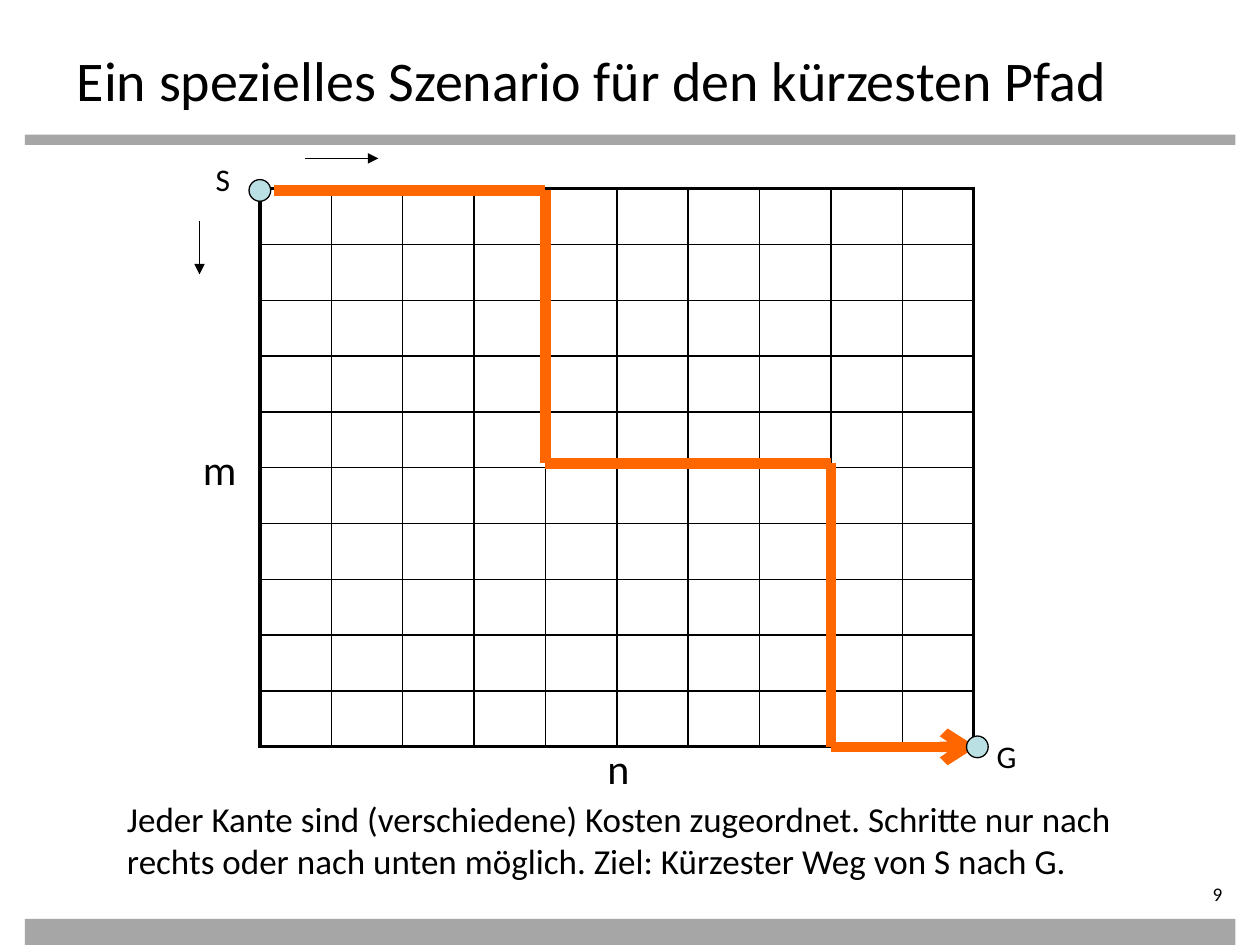
from pptx import Presentation
from pptx import util as u
from pptx.dml.color import RGBColor
from pptx.enum import shapes, text
from pptx.oxml.ns import qn
from lxml import etree

Pt = u.Pt
FONT = "Calibri"
COLORS = {"ink": "000000", "bar": "A6A6A6", "path": "FF6600", "node": "BBE0E3"}
N = 10


def rgb(name):
    """Return the named colour."""
    return RGBColor.from_string(COLORS[name])


def style(p, size, align=text.PP_ALIGN.LEFT):
    """Format a paragraph in the slide's typeface."""
    p.alignment = align
    p.font.name = FONT
    p.font.size = Pt(size)
    p.font.color.rgb = rgb("ink")


def add_text(s, box, words, size, wrap=False):
    """Add a text box and return its frame."""
    tf = s.shapes.add_textbox(*map(Pt, box)).text_frame
    tf.word_wrap = wrap
    tf.text = words
    style(tf.paragraphs[0], size)
    return tf


def add_shape(s, kind, box, fill, outline=False):
    """Add a flat filled shape with an optional thin outline."""
    sp = s.shapes.add_shape(kind, *map(Pt, box))
    sp.shadow.inherit = False
    sp.fill.solid()
    sp.fill.fore_color.rgb = rgb(fill)
    if outline:
        sp.line.color.rgb = rgb("ink")
        sp.line.width = Pt(0.75)
    else:
        sp.line.fill.background()


def add_line(s, start, end, color, width, head=None):
    """Add a straight line with an optional arrowhead at its end."""
    ln = s.shapes.add_connector(shapes.MSO_CONNECTOR.STRAIGHT,
                                *map(Pt, (*start, *end)))
    ln.line.color.rgb = rgb(color)
    ln.line.width = Pt(width)
    if head:
        etree.SubElement(ln.line._get_or_add_ln(), qn("a:tailEnd"), type=head)
    etree.SubElement(ln._element.spPr, qn("a:effectLst"))


def add_node(s, x, y, d=12.4):
    """Add a round node centred on a point."""
    add_shape(s, shapes.MSO_SHAPE.OVAL, (x - d / 2, y - d / 2, d, d), "node", True)


def set_borders(cell, widths):
    """Draw the left, right, top and bottom borders of a cell."""
    tcPr = cell._tc.get_or_add_tcPr()
    for i, (side, width) in enumerate(zip("LRTB", widths)):
        ln = etree.Element(qn("a:ln" + side), w=str(Pt(width)))
        fill = etree.SubElement(ln, qn("a:solidFill"))
        etree.SubElement(fill, qn("a:srgbClr"), val=COLORS["ink"])
        tcPr.insert(i, ln)


def add_grid(s, x, y, w, h):
    """Add the empty grid with a heavier outer frame."""
    table = s.shapes.add_table(N, N, *map(Pt, (x, y, w, h))).table
    table.first_row = table.horz_banding = False
    for i in range(N):
        table.columns[i].width = Pt(w / N)
        table.rows[i].height = Pt(h / N)
    for r in range(N):
        for c in range(N):
            cell = table.cell(r, c)
            cell.fill.background()
            edges = (c == 0, c == N - 1, r == 0, r == N - 1)
            set_borders(cell, [2.25 if edge else 1 for edge in edges])


def add_diagram(s, x, y, w, h):
    """Add the grid, its labels, the route and the step directions."""
    add_grid(s, x, y, w, h)
    add_node(s, x, y + 1)
    labels = [("S", -32.4, -20, 23.8, 28.8, 18), ("G", 414, 309.6, 26.6, 28.8, 18),
              ("m", -39.6, 142, 34.6, 36, 24), ("n", 191.5, 313.2, 28, 36, 24)]
    for words, dx, dy, lw, lh, size in labels:
        add_text(s, (x + dx, y + dy, lw, lh), words, size)

    turn1, turn2 = x + 0.4 * w, x + 0.8 * w
    top, middle, bottom = y + 1, y + 157, y + h
    route = [(x + 8, top), (turn1, top), (turn1, middle),
             (turn2, middle), (turn2, bottom), (x + w + 1.5, bottom)]
    for i, (start, end) in enumerate(zip(route, route[1:])):
        add_line(s, start, end, "path", 6, "arrow" if i == len(route) - 2 else None)
    add_node(s, x + w + 2, bottom)

    add_line(s, (x + 26, y - 17.3), (x + 67.7, y - 17.3), "ink", 0.75, "triangle")
    add_line(s, (x - 34.5, y + 18.7), (x - 34.5, y + 49), "ink", 0.75, "triangle")


def add_title(s, x, y, w, h):
    """Place and format the title."""
    sp = s.shapes.title
    sp.left, sp.top, sp.width, sp.height = map(Pt, (x, y, w, h))
    tf = sp.text_frame
    tf.text = "Ein spezielles Szenario für den kürzesten Pfad"
    tf.auto_size = text.MSO_AUTO_SIZE.NONE
    tf.vertical_anchor = text.MSO_ANCHOR.TOP
    tf.margin_top = Pt(6)
    style(tf.paragraphs[0], 32)


def add_page_number(s, x, y, w, h):
    """Add the right-aligned page number."""
    tf = add_text(s, (x, y, w, h), "9", 11, True)
    tf.margin_left = tf.margin_top = tf.margin_bottom = 0
    tf.paragraphs[0].alignment = text.PP_ALIGN.RIGHT


def main():
    """Build and save the slide."""
    prs = Presentation()
    prs.slide_width, prs.slide_height = Pt(720), Pt(540)
    s = prs.slides.add_slide(prs.slide_layouts[5])
    for top, height in ((77, 5.8), (525, 15)):
        add_shape(s, shapes.MSO_SHAPE.RECTANGLE, (14.2, top, 691.8, height), "bar")
    add_title(s, 36.7, 20.2, 648, 39.6)
    add_diagram(s, 148.5, 107.8, 408, 319)
    add_text(s, (65.5, 452.2, 604, 55.4),
             "Jeder Kante sind (verschiedene) Kosten zugeordnet. Schritte nur nach "
             "rechts oder nach unten möglich. Ziel: Kürzester Weg von S nach G.",
             20, True)
    add_page_number(s, 626.4, 504, 79.2, 15.8)
    prs.save("out.pptx")


if __name__ == "__main__":
    main()
